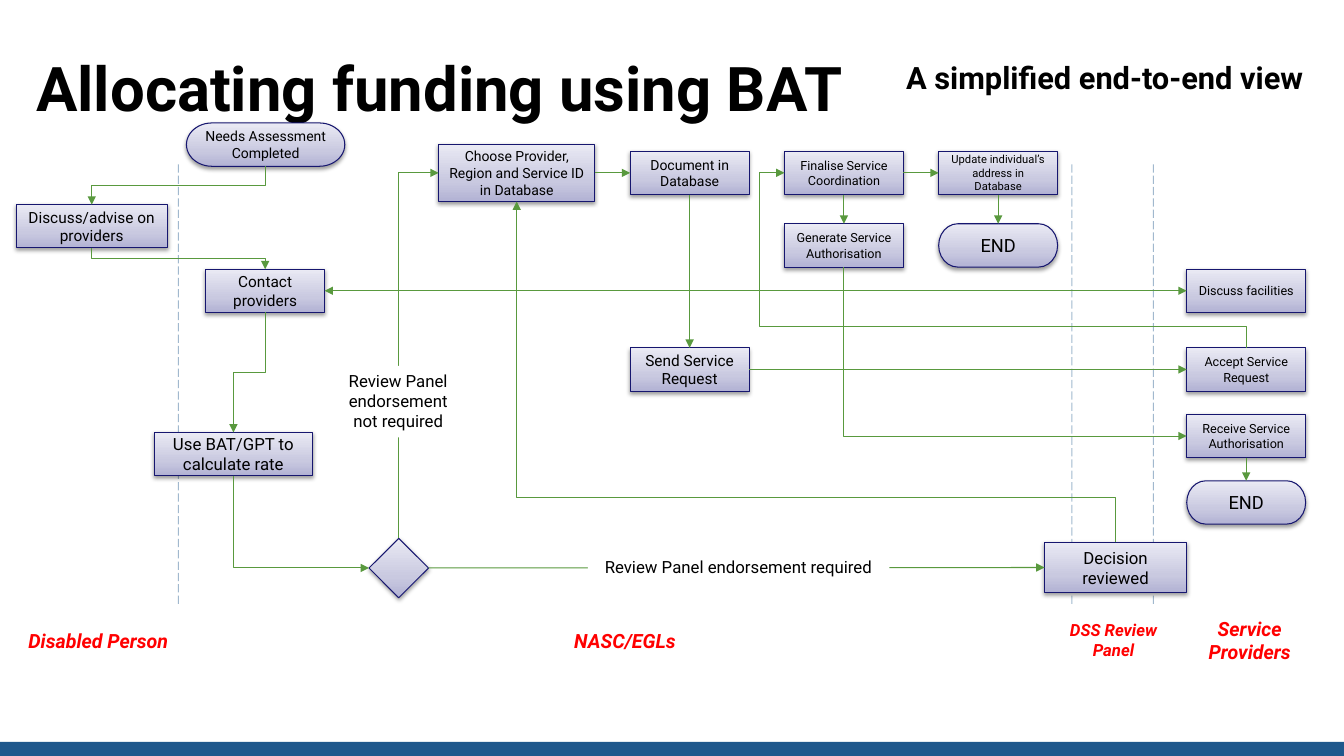
from lxml import etree
from pptx import Presentation
from pptx.dml.color import RGBColor
from pptx.enum.dml import MSO_LINE
from pptx.enum.shapes import MSO_CONNECTOR, MSO_SHAPE
from pptx.enum.text import MSO_ANCHOR, PP_ALIGN
from pptx.oxml.ns import qn
from pptx.util import Inches, Pt

FONT = "Roboto"
COLORS = {"text": "000000", "lane": "FF0000", "bar": "1F588C", "white": "FFFFFF",
          "border": "16166F", "arrow": "59993E", "shadow": "000000"}
GRADIENT = [(0, "B2B2D4"), (35, "C9C9E0"), (100, "EAEAF4")]
TOP, LEFT, BOTTOM, RIGHT = range(4)
PROCESS = MSO_SHAPE.FLOWCHART_PROCESS
TERMINATOR = MSO_SHAPE.FLOWCHART_TERMINATOR
DECISION = MSO_SHAPE.FLOWCHART_DECISION
W, H = 1.18, 0.43          # usual box size
PROVIDER_X = 11.77         # column of the service providers

# text, (left, top, width, height), size, colour, italic, alignment
HEADINGS = [
    ("Allocating funding using BAT", (0.26, 0.45, 8.5, 0.71), 44, "text", False, PP_ALIGN.LEFT),
    ("A simplified end-to-end view", (8.84, 0.53, 4.23, 0.48), 22, "text", False, PP_ALIGN.CENTER),
    ("Disabled Person", (0.17, 6.19, 1.61, 0.34), 14, "lane", True, PP_ALIGN.CENTER),
    ("NASC/EGLs", (1.77, 6.19, 8.86, 0.34), 14, "lane", True, PP_ALIGN.CENTER),
    ("DSS Review Panel", (10.48, 6.1, 1.13, 0.5), 12, "lane", True, PP_ALIGN.CENTER),
    ("Service\nProviders", (11.45, 6.07, 1.89, 0.57), 14, "lane", True, PP_ALIGN.CENTER),
]
LANE_LINES = [1.77, 10.63, 11.44]

# key: (shape, text, (left, top, width, height), size)
STEPS = {
    "needs": (TERMINATOR, "Needs Assessment Completed", (1.85, 1.22, 1.57, H), 10),
    "advise": (PROCESS, "Discuss/advise on providers", (0.16, 2.03, 1.5, H), 11),
    "contact": (PROCESS, "Contact providers", (2.04, 2.67, W, H), 11),
    "facilities": (PROCESS, "Discuss facilities", (PROVIDER_X, 2.67, W, H), 9),
    "rate": (PROCESS, "Use BAT/GPT to calculate rate", (1.53, 4.29, 1.57, H), 12),
    "document": (PROCESS, "Document in Database", (6.25, 1.5, W, H), 10),
    "send": (PROCESS, "Send Service Request", (6.25, 3.45, W, H), 11),
    "choose": (PROCESS, "Choose Provider, Region and Service ID in Database",
               (4.35, 1.43, 1.55, 0.57), 10),
    "panel": (DECISION, "", (3.66, 5.34, 0.59, 0.59), 12),
    "accept": (PROCESS, "Accept Service Request", (PROVIDER_X, 3.45, W, H), 9),
    "address": (PROCESS, "Update individual’s address in Database", (9.31, 1.5, W, H), 8),
    "address_end": (TERMINATOR, "END", (9.31, 2.22, W, H), 13),
    "finalise": (PROCESS, "Finalise Service Coordination", (7.78, 1.5, W, H), 9),
    "generate": (PROCESS, "Generate Service Authorisation", (7.78, 2.22, W, H), 9),
    "receive": (PROCESS, "Receive Service Authorisation", (PROVIDER_X, 4.11, W, H), 9),
    "receive_end": (TERMINATOR, "END", (PROVIDER_X, 4.77, W, H), 13),
    "review": (PROCESS, "Decision reviewed", (10.36, 5.38, 1.41, 0.5), 12),
}
# from, side, to, side, arrowheads
STRAIGHT = [
    ("facilities", LEFT, "contact", RIGHT, ("headEnd", "tailEnd")),
    ("choose", RIGHT, "document", LEFT, ("tailEnd",)),
    ("document", BOTTOM, "send", TOP, ("tailEnd",)),
    ("send", RIGHT, "accept", LEFT, ("tailEnd",)),
    ("finalise", RIGHT, "address", LEFT, ("tailEnd",)),
    ("address", BOTTOM, "address_end", TOP, ("tailEnd",)),
    ("finalise", BOTTOM, "generate", TOP, ("tailEnd",)),
    ("receive", BOTTOM, "receive_end", TOP, ("tailEnd",)),
    ("panel", RIGHT, "review", LEFT, ("tailEnd",)),
]
# from, side, to, side, bend positions as fractions of the run
ELBOWS = [
    ("needs", BOTTOM, "advise", TOP, [0.5]),
    ("advise", BOTTOM, "contact", TOP, [0.5]),
    ("contact", BOTTOM, "rate", TOP, [0.5]),
    ("review", TOP, "choose", BOTTOM, [0.13]),
    ("rate", BOTTOM, "panel", LEFT, []),
    ("accept", TOP, "finalise", LEFT, [0.12, 1.055]),
    ("generate", BOTTOM, "receive", LEFT, []),
    ("panel", TOP, "choose", LEFT, []),
]
# text, (left, top, width, height)
BRANCH_LABELS = [
    ("Review Panel\nendorsement\nnot required", (3.35, 3.63, 1.2, 0.71)),
    ("Review Panel endorsement required", (5.83, 5.47, 2.99, 0.3)),
]


def rgb(name):
    return RGBColor.from_string(COLORS[name])


def add_xml(parent, tag, **attrs):
    return etree.SubElement(parent, qn(tag), {k: str(v) for k, v in attrs.items()})


def write(sp, text, size, color="text", bold=False, italic=False,
          align=PP_ALIGN.CENTER, anchor=MSO_ANCHOR.TOP):
    tf = sp.text_frame
    tf.word_wrap = True
    tf.vertical_anchor = anchor
    tf.text = text
    for p in tf.paragraphs:
        p.alignment = align
        p.font.name, p.font.size = FONT, Pt(size)
        p.font.bold, p.font.italic = bold, italic
        p.font.color.rgb = rgb(color)


def add_plain(s, box, color):
    sp = s.shapes.add_shape(MSO_SHAPE.RECTANGLE, *map(Inches, box))
    sp.shadow.inherit = False
    sp.fill.solid()
    sp.fill.fore_color.rgb = rgb(color)
    sp.line.fill.background()
    return sp


def add_step(s, kind, text, box, size):
    sp = s.shapes.add_shape(kind, *map(Inches, box))
    sp.line.color.rgb = rgb("border")
    sp.line.width = Pt(0.75)
    sp.fill.gradient()
    sp.fill.gradient_angle = 90
    stops = sp._element.spPr.find(".//" + qn("a:gsLst"))
    for stop in list(stops):
        stops.remove(stop)
    for pos, color in GRADIENT:
        add_xml(add_xml(stops, "a:gs", pos=pos * 1000), "a:srgbClr", val=color)
    sp.shadow.inherit = False
    shadow = add_xml(sp._element.spPr.find(qn("a:effectLst")), "a:outerShdw",
                     blurRad=Pt(3.1), dist=Pt(1.6), dir=5400000, rotWithShape=0)
    add_xml(add_xml(shadow, "a:srgbClr", val=COLORS["shadow"]), "a:alpha", val=38000)
    if text:
        write(sp, text, size, anchor=MSO_ANCHOR.MIDDLE)
    return sp


def add_line(s, kind, ends, color, heads=()):
    c = s.shapes.add_connector(kind, *ends)
    c.line.color.rgb = rgb(color)
    c.line.width = Pt(0.75)
    spPr = c._element.spPr
    for head in heads:
        add_xml(spPr.find(qn("a:ln")), "a:" + head, type="triangle")
    add_xml(spPr, "a:effectLst")
    return c


def side_point(sp, side):
    dx, dy = [(0.5, 0), (0, 0.5), (0.5, 1), (1, 0.5)][side]
    return int(sp.left + dx * sp.width), int(sp.top + dy * sp.height)


def add_elbow(s, start, end, bends):
    """Elbow that leaves its start vertically: a turned, sometimes mirrored, connector."""
    (x1, y1), (x2, y2) = start, end
    run, rise = abs(y2 - y1), abs(x2 - x1)
    left, top = (x1 + x2 - run) // 2, (y1 + y2 - rise) // 2
    c = add_line(s, MSO_CONNECTOR.ELBOW, (left, top, left + run, top + rise),
                 "arrow", ("tailEnd",))
    down = y2 > y1
    xfrm = c._element.spPr.find(qn("a:xfrm"))
    xfrm.set("rot", str((90 if down else 270) * 60000))
    if down == (x2 > x1):
        xfrm.set("flipV", "1")
    geom = c._element.spPr.find(qn("a:prstGeom"))
    geom.set("prst", f"bentConnector{len(bends) + 2}")
    guides = geom.find(qn("a:avLst"))
    for i, bend in enumerate(bends, 1):
        add_xml(guides, "a:gd", name=f"adj{i}", fmla=f"val {round(bend * 100000)}")


def main():
    prs = Presentation()
    prs.slide_width, prs.slide_height = Inches(13.33), Inches(7.5)
    s = prs.slides.add_slide(prs.slide_layouts[6])

    # Footer bar, headings and lane names
    add_plain(s, (0, 7.36, 13.33, 0.14), "bar")
    for text, box, size, color, italic, align in HEADINGS:
        write(s.shapes.add_textbox(*map(Inches, box)), text, size, color, True, italic, align)

    # Lane dividers
    for x in LANE_LINES:
        c = add_line(s, MSO_CONNECTOR.STRAIGHT, map(Inches, (x, 1.63, x, 6)), "bar")
        c.line.dash_style = MSO_LINE.LONG_DASH
        add_xml(c._element.spPr.find(".//" + qn("a:srgbClr")), "a:alpha", val=42000)

    # Process steps
    steps = {key: add_step(s, *step) for key, step in STEPS.items()}

    # Arrows
    for a, a_side, b, b_side, heads in STRAIGHT:
        ends = side_point(steps[a], a_side) + side_point(steps[b], b_side)
        c = add_line(s, MSO_CONNECTOR.STRAIGHT, ends, "arrow", heads)
        c.begin_connect(steps[a], a_side)
        c.end_connect(steps[b], b_side)
    for a, a_side, b, b_side, bends in ELBOWS:
        add_elbow(s, side_point(steps[a], a_side), side_point(steps[b], b_side), bends)

    # Branch labels over the arrows
    for text, box in BRANCH_LABELS:
        write(add_plain(s, box, "white"), text, 12)

    prs.save("out.pptx")


if __name__ == "__main__":
    main()
